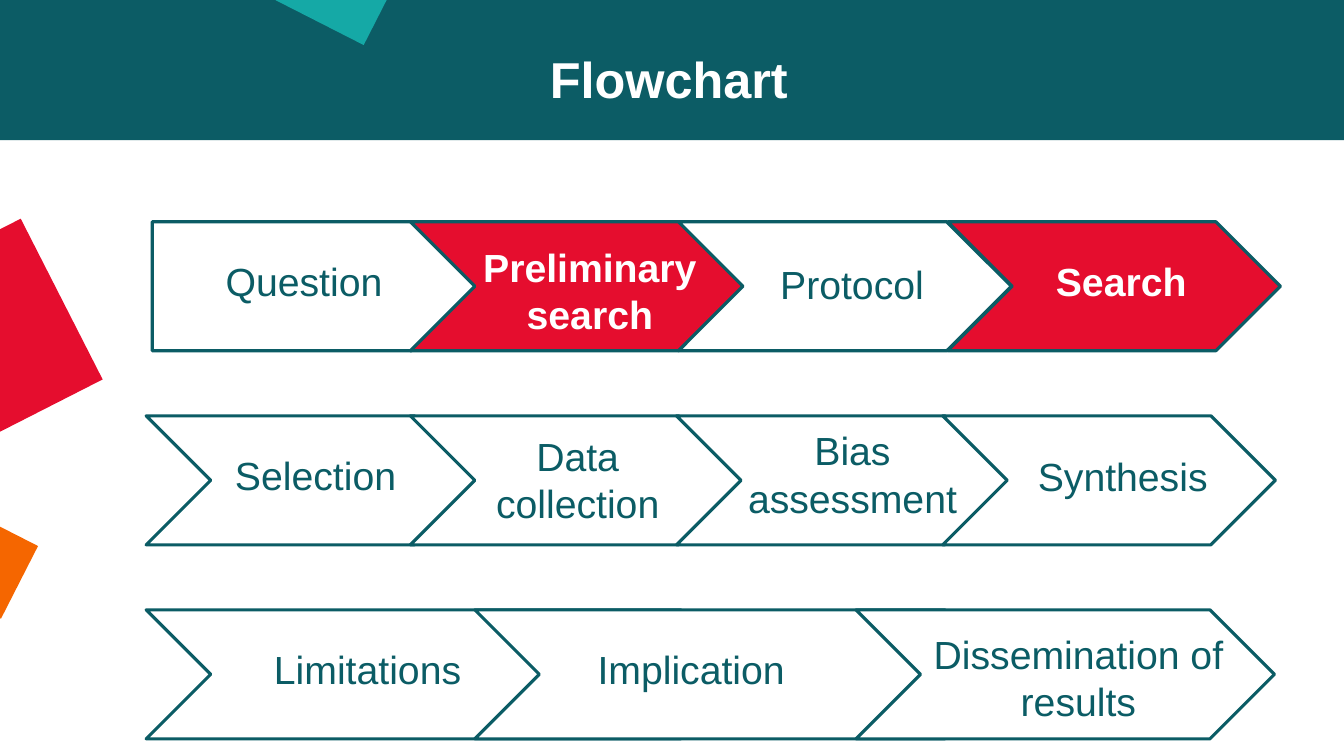
from pptx import Presentation
from pptx.dml.color import RGBColor
from pptx.enum.shapes import MSO_SHAPE
from pptx.enum.text import MSO_ANCHOR, MSO_AUTO_SIZE, PP_ALIGN
from pptx.util import Inches, Pt

RECT = MSO_SHAPE.RECTANGLE
PLATE = MSO_SHAPE.PENTAGON
ARROW = MSO_SHAPE.CHEVRON
TOP = MSO_ANCHOR.TOP
FIXED = MSO_AUTO_SIZE.NONE
CENTER = PP_ALIGN.CENTER

FONT = "Arial"
WHITE = "FFFFFF"
BAND = "0C5C65"
TEAL = "0B5C65"
RED = "E50D2E"

TILES = [
    (-1.09, 2.48, 1.8, 1.79, 333, RED),
    (-0.61, 5.18, 0.85, 0.81, 27, "F56600"),
    (2.91, -0.73, 0.98, 1.01, 27, "15A9A6"),
]

# Each step: left, width, text, label left, label width, label drop, active.
ROWS = [
    [
        (0.06, 3.21, "Question", 0.27, 2.59, 0.3, False),
        (2.62, 3.3, "Preliminary search", 3.17, 2.46, 0.16, True),
        (5.28, 3.3, "Protocol", 5.94, 2.12, 0.33, False),
        (7.95, 3.3, "Search", 8.63, 2.08, 0.3, True),
    ],
    [
        (0, 3.3, "Selection", 0.51, 2.34, 0.3, False),
        (2.62, 3.3, "Data\ncollection", 3.11, 2.34, 0.11, False),
        (5.26, 3.3, "Bias assessment", 5.85, 2.31, 0.06, False),
        (7.9, 3.3, "Synthesis", 8.63, 2.11, 0.31, False),
    ],
    [
        (0, 5.94, "Limitations", 0.09, 4.21, 0.3, False),
        (3.26, 5.3, "Implication", 3.3, 4.21, 0.3, False),
        (7.04, 4.15, "Dissemination of results", 7.17, 4.15, 0.15, False),
    ],
]


def color(code):
    """Turn a hex string into a colour."""
    return RGBColor.from_string(code)


def add_form(slide, kind, box, fill=None, line=None):
    """Add a preset shape with a flat fill and an optional outline."""
    form = slide.shapes.add_shape(kind, *map(Inches, box))
    form.shadow.inherit = False
    if fill:
        form.fill.solid()
        form.fill.fore_color.rgb = color(fill)
    else:
        form.fill.background()
    if line:
        form.line.color.rgb = color(line)
        form.line.width = Pt(2.25)
    else:
        form.line.fill.background()
    return form


def add_text(frame, text, size, tint, bold):
    """Write centred text run by run into a frame."""
    frame.word_wrap = True
    frame.auto_size = FIXED
    frame.vertical_anchor = TOP
    para = frame.paragraphs[0]
    para.alignment = CENTER
    for i, part in enumerate(text.split("\n")):
        if i:
            para.add_line_break()
        run = para.add_run()
        run.text = part
        run.font.name = FONT
        run.font.size = Pt(size)
        run.font.bold = bold
        run.font.color.rgb = color(tint)
    return para


def add_decor(slide, width):
    """Draw the header band and the tilted tiles."""
    add_form(slide, RECT, (0, 0, width, 1.39), BAND)
    for *box, turn, fill in TILES:
        add_form(slide, RECT, box, fill).rotation = turn


def add_title(slide, box, text):
    """Place the title in front of the header band."""
    title = slide.shapes.title
    slide.shapes.element.append(title.element)
    title.left, title.top, title.width, title.height = map(Inches, box)
    para = add_text(title.text_frame, text, 36, WHITE, True)
    para.line_spacing = 0.9


def add_row(slide, left, top, high, steps, first):
    """Draw one row of linked arrows, then its labels."""
    for i, (x, wide, _, _, _, _, active) in enumerate(steps):
        plate = first and i == 0
        fill = None if plate else RED if active else WHITE
        box = (left + x, top, wide, high)
        add_form(slide, PLATE if plate else ARROW, box, fill, TEAL)
    for _, _, text, x, wide, drop, active in steps:
        box = (left + x, top + drop, wide, 0.57)
        label = slide.shapes.add_textbox(*map(Inches, box))
        add_text(label.text_frame, text, 28, WHITE if active else TEAL, active)


def add_flow(slide, left, top, high, pitch):
    """Stack the rows of the flowchart."""
    for i, steps in enumerate(ROWS):
        add_row(slide, left, top + i * pitch, high, steps, i == 0)


def main():
    """Build and save the slide."""
    deck = Presentation()
    deck.slide_width = Inches(13.33)
    deck.slide_height = Inches(7.5)
    slide = deck.slides.add_slide(deck.slide_layouts[5])
    add_decor(slide, 13.33)
    add_title(slide, (2.99, 0.5, 7.29, 0.7), "Flowchart")
    add_flow(slide, 1.45, 2.2, 1.28, 1.925 + 0.0)
    deck.save("out.pptx")


if __name__ == "__main__":
    main()
